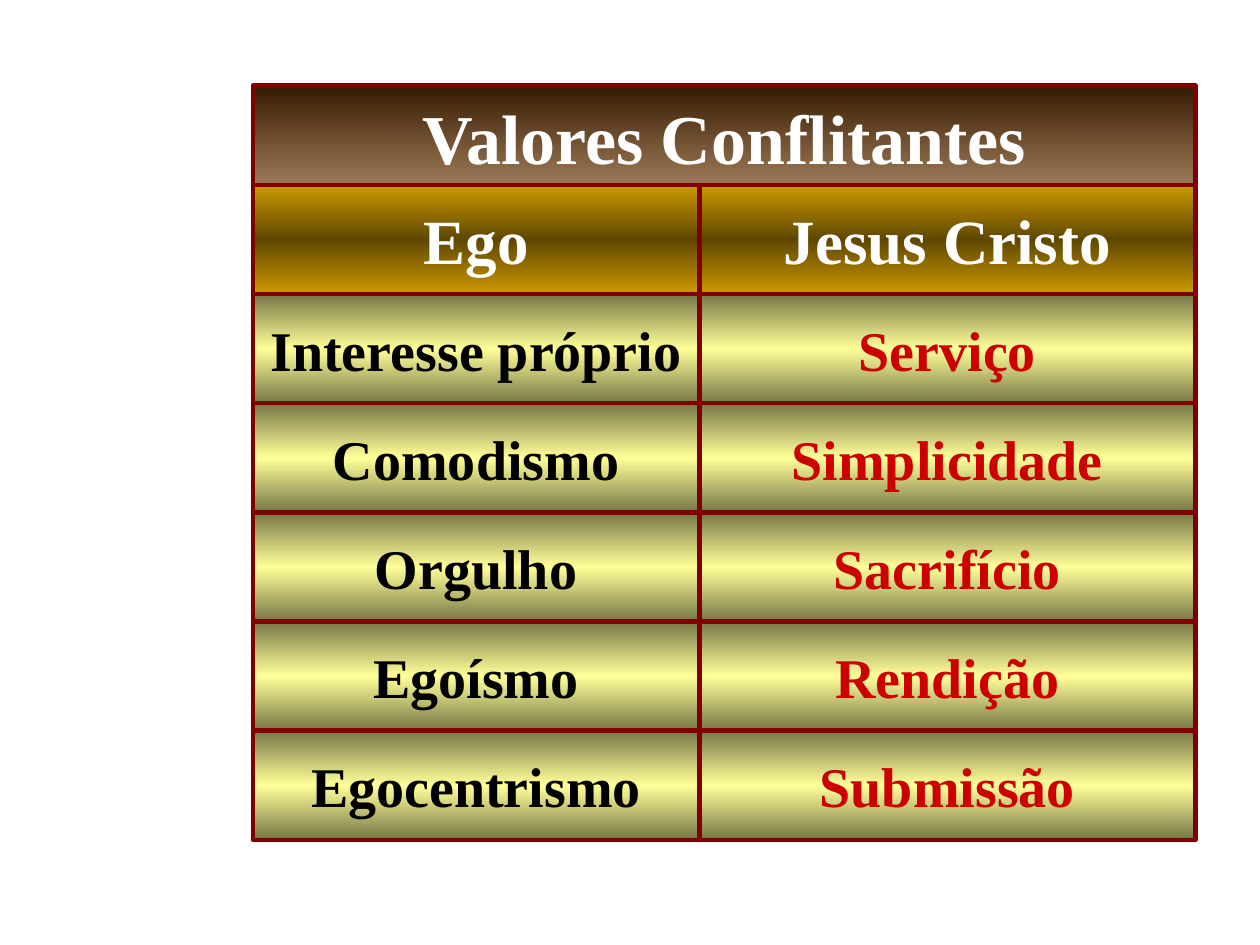
"""Builds a slide that contrasts the values of the ego with those of Jesus Cristo."""
from lxml import etree
from pptx import Presentation
from pptx.dml.color import RGBColor
from pptx.enum.shapes import MSO_SHAPE
from pptx.enum.text import MSO_ANCHOR, MSO_AUTO_SIZE, PP_ALIGN
from pptx.oxml.ns import qn
from pptx.util import Cm, Pt

RECTANGLE = MSO_SHAPE.RECTANGLE
BOTTOM, MIDDLE = MSO_ANCHOR.BOTTOM, MSO_ANCHOR.MIDDLE
CENTER = PP_ALIGN.CENTER
NO_AUTOFIT = MSO_AUTO_SIZE.NONE
TITLE_ONLY = 5

COLORS = {
    "border": "800000",
    "brown": "663300",
    "gold": "CC9900",
    "yellow": "FFFF99",
    "white": "FFFFFF",
    "black": "000000",
    "red": "CC0000",
}
DARK = (("gamma", None), ("shade", 46275), ("invGamma", None))
HALF_DARK = (("gamma", None), ("shade", 50000), ("invGamma", None))
FADED = (("alpha", 65000),)
GRADIENTS = {
    "title": ("brown", ((0, HALF_DARK), (100, FADED))),
    "header": ("gold", ((0, ()), (50, DARK), (100, ()))),
    "value": ("yellow", ((0, DARK), (50, ()), (100, DARK))),
}

LEFT, TITLE_TOP, TITLE_HEIGHT, ROW_HEIGHT = 5.1, 1.73, 2, 2.2
EGO_WIDTH, CRISTO_WIDTH = 9, 10
ROWS_TOP = TITLE_TOP + TITLE_HEIGHT
COLUMNS = (
    (LEFT + EGO_WIDTH, CRISTO_WIDTH, "red",
     ("Jesus Cristo", "Serviço", "Simplicidade", "Sacrifício", "Rendição", "Submissão")),
    (LEFT, EGO_WIDTH, "black",
     ("Ego", "Interesse próprio", "Comodismo", "Orgulho", "Egoísmo", "Egocentrismo")),
)


class ValuesSlide:
    """Holds the style and the current slide."""

    font_name = "Times New Roman"

    def __init__(self, slide):
        self.slide = slide

    def paint(self, shape, gradient, line_width):
        """Gives a shape its gradient and border."""
        color, stops = GRADIENTS[gradient]
        shape.fill.gradient()
        shape.fill.gradient_angle = 270
        stop_list = shape._element.spPr.find(qn("a:gradFill")).find(qn("a:gsLst"))
        for stop in list(stop_list):
            stop_list.remove(stop)
        for position, changes in stops:
            stop = etree.SubElement(stop_list, qn("a:gs"), pos=str(position * 1000))
            shade = etree.SubElement(stop, qn("a:srgbClr"), val=COLORS[color])
            for name, value in changes:
                change = etree.SubElement(shade, qn(f"a:{name}"))
                if value is not None:
                    change.set("val", str(value))
        shape.line.color.rgb = RGBColor.from_string(COLORS["border"])
        shape.line.width = Pt(line_width)
        shape.shadow.inherit = False

    def label(self, shape, text, size, color, anchor, wrap):
        """Puts one centred bold line into a shape."""
        text_frame = shape.text_frame
        text_frame.text = text
        text_frame.auto_size = NO_AUTOFIT
        text_frame.word_wrap = wrap
        text_frame.vertical_anchor = anchor
        paragraph = text_frame.paragraphs[0]
        paragraph.alignment = CENTER
        font = paragraph.runs[0].font
        font.name = self.font_name
        font.size = Pt(size)
        font.bold = True
        font.color.rgb = RGBColor.from_string(COLORS[color])

    def title(self, text):
        """Formats the title placeholder as the banner above the columns."""
        shape = self.slide.shapes.title
        shape.left, shape.top = Cm(LEFT), Cm(TITLE_TOP)
        shape.width, shape.height = Cm(EGO_WIDTH + CRISTO_WIDTH), Cm(TITLE_HEIGHT)
        self.paint(shape, "title", 2.75)
        self.label(shape, text, 40, "white", BOTTOM, True)

    def cell(self, left, row, width, text, gradient, size, color):
        """Adds one cell of the comparison."""
        top = ROWS_TOP + row * ROW_HEIGHT
        shape = self.slide.shapes.add_shape(
            RECTANGLE, Cm(left), Cm(top), Cm(width), Cm(ROW_HEIGHT))
        self.paint(shape, gradient, 2.5)
        self.label(shape, text, size, color, MIDDLE, False)


def main():
    """Builds and saves the presentation."""
    presentation = Presentation()
    presentation.slide_width, presentation.slide_height = Cm(25.4), Cm(19.05)
    layout = presentation.slide_layouts[TITLE_ONLY]
    values_slide = ValuesSlide(presentation.slides.add_slide(layout))
    values_slide.title("Valores Conflitantes")
    for left, width, color, (header, *values) in COLUMNS:
        values_slide.cell(left, 0, width, header, "header", 36, "white")
        for row, value in enumerate(values, start=1):
            values_slide.cell(left, row, width, value, "value", 32, color)
    presentation.save("out.pptx")


if __name__ == "__main__":
    main()
